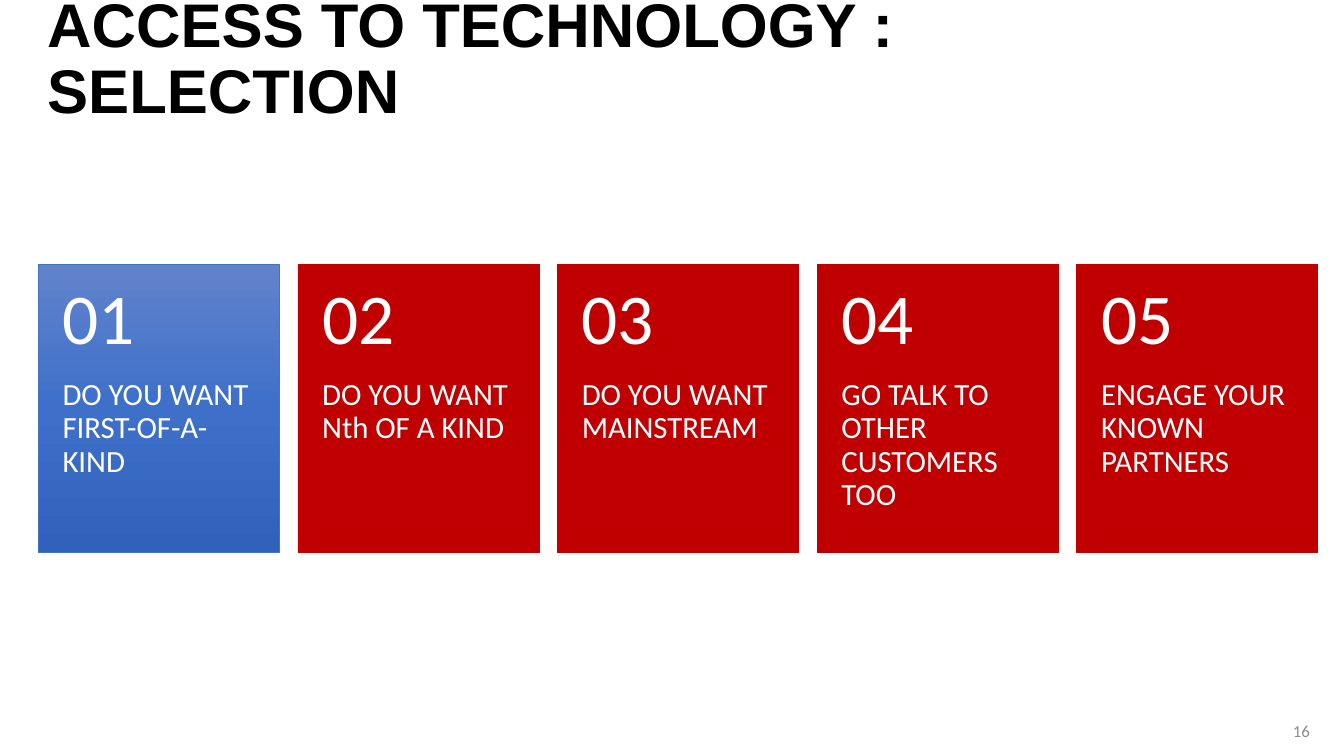
from copy import deepcopy

from pptx import Presentation
from pptx.dml.color import RGBColor
from pptx.enum.shapes import MSO_SHAPE
from pptx.enum.text import MSO_ANCHOR, PP_ALIGN
from pptx.oxml.ns import qn
from pptx.util import Inches, Pt

RECTANGLE = MSO_SHAPE.RECTANGLE
TOP, MIDDLE = MSO_ANCHOR.TOP, MSO_ANCHOR.MIDDLE
LEFT, RIGHT = PP_ALIGN.LEFT, PP_ALIGN.RIGHT

BLACK = RGBColor(0x00, 0x00, 0x00)
WHITE = RGBColor(0xFF, 0xFF, 0xFF)
GRAY = RGBColor(0x8C, 0x8C, 0x8C)
RED = RGBColor(0xC0, 0x00, 0x00)
BLUE = RGBColor(0x44, 0x72, 0xC4)
BLUE_STOPS = [
    (0, RGBColor(0x61, 0x83, 0xCB)),
    (0.5, RGBColor(0x3E, 0x70, 0xCA)),
    (1, RGBColor(0x30, 0x62, 0xBB)),
]

prs = Presentation()
prs.slide_width = Inches(13.33)
prs.slide_height = Inches(7.5)
slide = prs.slides.add_slide(prs.slide_layouts[6])


def add_text(box, insets, text, size, color, anchor=MIDDLE, font="Calibri",
             align=LEFT, spacing=0.9):
    tf = slide.shapes.add_textbox(*map(Inches, box)).text_frame
    tf.word_wrap = True
    tf.vertical_anchor = anchor
    tf.margin_left, tf.margin_top, tf.margin_right, tf.margin_bottom = map(Inches, insets)
    p = tf.paragraphs[0]
    p.text = text
    p.alignment = align
    p.line_spacing = spacing
    p.font.size = Pt(size)
    p.font.name = font
    p.font.color.rgb = color
    return p


# Title
title = add_text((0.37, 0.13, 12.27, 0.94), (0.1, 0.05, 0.3, 0.05),
                 "ACCESS TO TECHNOLOGY : SELECTION", 44, BLACK, font="Arial")
title.font.bold = True

# Numbered cards
CARD_LEFT, CARD_TOP, CARD_STEP = 0.38, 2.62, 2.575
CARD_WIDTH, CARD_HEIGHT, NUMBER_HEIGHT = 2.39, 2.86, 1.14
cards = [
    "DO YOU WANT FIRST-OF-A-KIND",
    "DO YOU WANT Nth OF A KIND",
    "DO YOU WANT MAINSTREAM",
    "GO TALK TO OTHER CUSTOMERS TOO",
    "ENGAGE YOUR KNOWN PARTNERS",
]
for i, label in enumerate(cards):
    x = CARD_LEFT + i * CARD_STEP
    sp = slide.shapes.add_shape(RECTANGLE, Inches(x), Inches(CARD_TOP),
                                Inches(CARD_WIDTH), Inches(CARD_HEIGHT))
    sp.shadow.inherit = False
    sp.line.width = Pt(0.5)
    if i == 0:
        # The first card has a three-stop gradient running downwards
        sp.fill.gradient()
        sp.fill.gradient_angle = 270
        stop_list = sp._element.spPr.find(qn("a:gradFill")).find(qn("a:gsLst"))
        stop_list.append(deepcopy(stop_list[0]))
        for stop, (position, color) in zip(sp.fill.gradient_stops, BLUE_STOPS):
            stop.position = position
            stop.color.rgb = color
        sp.line.color.rgb = BLUE
    else:
        sp.fill.solid()
        sp.fill.fore_color.rgb = RED
        sp.line.color.rgb = RED

    add_text((x, CARD_TOP + NUMBER_HEIGHT, CARD_WIDTH, CARD_HEIGHT - NUMBER_HEIGHT),
             (0.24, 0, 0.24, 0.36), label, 22, WHITE, anchor=TOP)
    add_text((x, CARD_TOP, CARD_WIDTH, NUMBER_HEIGHT),
             (0.24, 0.18, 0.24, 0.18), f"{i + 1:02}", 51, WHITE)

# Slide number
add_text((12.35, 7.09, 0.74, 0.32), (0.1, 0.05, 0.1, 0.05), "16", 12, GRAY,
         align=RIGHT, spacing=1.0)

prs.save("out.pptx")
